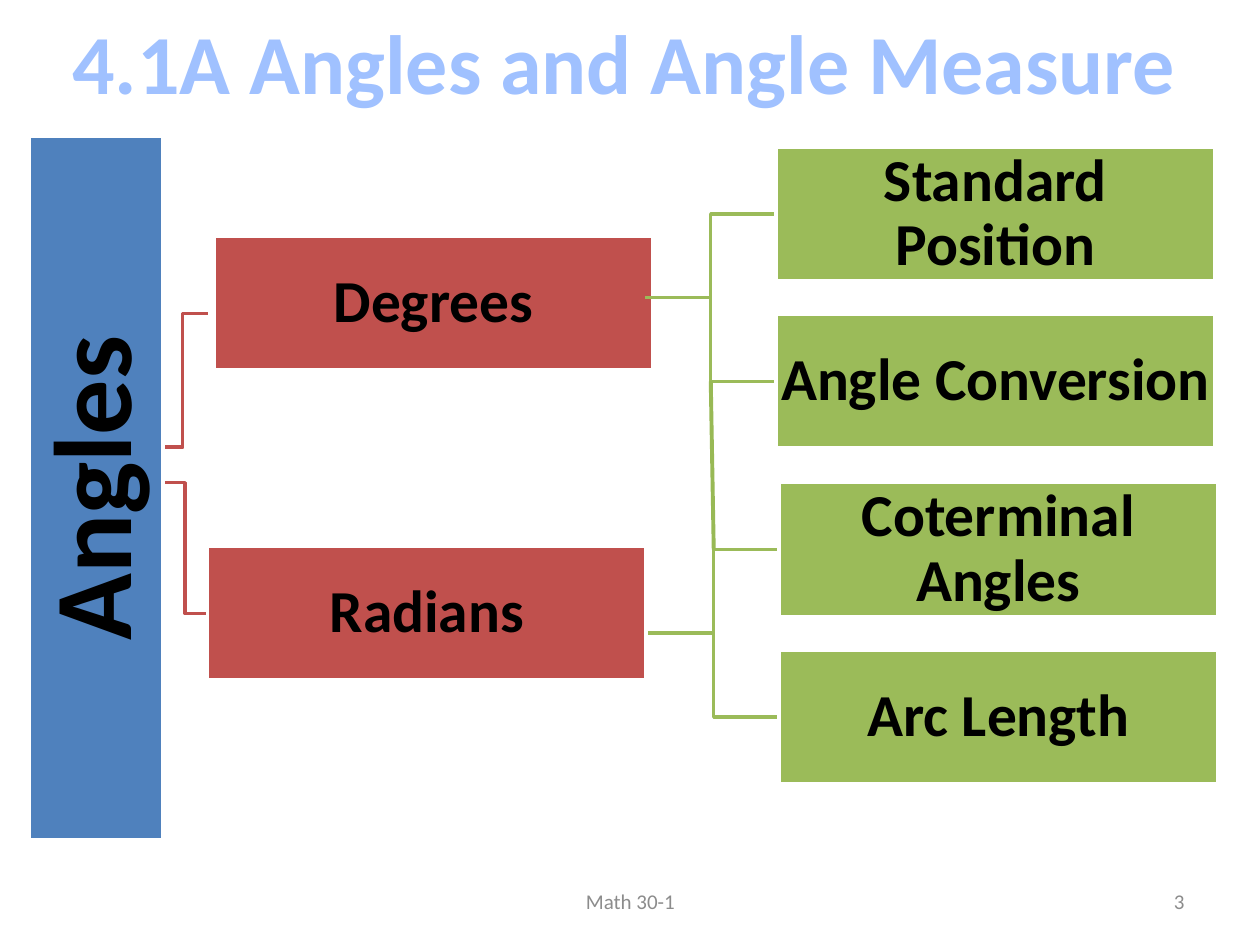
from dataclasses import dataclass

from lxml import etree
from pptx import Presentation
from pptx.dml.color import RGBColor
from pptx.enum import shapes, text
from pptx.oxml import ns
from pptx.util import Pt


@dataclass(frozen=True)
class Theme:
    font: str = "Calibri"
    title: str = "A0C1FF"
    root: str = "4F81BD"
    unit: str = "C0504D"
    topic: str = "9BBB59"
    link: str = "98B955"
    ink: str = "000000"
    paper: str = "FFFFFF"
    footer: str = "8C8C8C"
    title_size: float = 48
    root_size: float = 63
    node_size: float = 34
    footer_size: float = 12
    line: float = 2
    link_line: float = 2.25


THEME = Theme()
NODE_W, NODE_H = 250.5, 76.5
TOPIC_GAP = 19
FORK_W = 74.7


def write(frame, wording, size, color=THEME.ink, bold=False, spacing=1.0,
          align=text.PP_ALIGN.CENTER, anchor=text.MSO_ANCHOR.MIDDLE,
          inset=None, wrap=True):
    frame.word_wrap = wrap
    frame.vertical_anchor = anchor
    if inset is not None:
        frame.margin_left = frame.margin_right = Pt(inset)
        frame.margin_top = frame.margin_bottom = Pt(inset)
    paragraph = frame.paragraphs[0]
    paragraph.alignment = align
    paragraph.line_spacing = spacing
    run = paragraph.add_run()
    run.text = wording
    run.font.name = THEME.font
    run.font.size = Pt(size)
    run.font.bold = bold
    run.font.color.rgb = RGBColor.from_string(color)


def stroke(line, color, width=THEME.line):
    line.color.rgb = RGBColor.from_string(color)
    line.width = Pt(width)


def add_label(slide, box, wording, size, **style):
    label = slide.shapes.add_textbox(*map(Pt, box))
    write(label.text_frame, wording, size, **style)
    return label


def add_node(slide, box, wording, fill, size=THEME.node_size, inset=1.5, rotation=0):
    node = slide.shapes.add_shape(shapes.MSO_SHAPE.RECTANGLE, *map(Pt, box))
    node.rotation = rotation
    node.shadow.inherit = False
    node.fill.solid()
    node.fill.fore_color.rgb = RGBColor.from_string(fill)
    stroke(node.line, THEME.paper)
    write(node.text_frame, wording, size, bold=True, spacing=0.9, inset=inset)


def add_elbow(slide, start, end, color):
    middle = (start[0] + end[0]) / 2
    points = [start, (middle, start[1]), (middle, end[1]), end]
    corners = [(Pt(x), Pt(y)) for x, y in points]
    builder = slide.shapes.build_freeform(*corners[0])
    builder.add_line_segments(corners[1:], close=False)
    elbow = builder.convert_to_shape()
    elbow.fill.background()
    elbow.shadow.inherit = False
    stroke(elbow.line, color)


def add_title(slide, box):
    title = add_label(slide, box, "4.1A Angles and Angle Measure", THEME.title_size,
                      color=THEME.title, bold=True, wrap=False,
                      anchor=text.MSO_ANCHOR.TOP)
    title.text_frame.auto_size = text.MSO_AUTO_SIZE.SHAPE_TO_FIT_TEXT


def add_root(slide, box):
    """Vertical bar: a wide node turned a quarter to the left about its centre."""
    left, top, width, height = box
    turned = (left + (width - height) / 2, top + (height - width) / 2, height, width)
    add_node(slide, turned, "Angles", THEME.root, THEME.root_size, 2.9, rotation=270)


def add_topics(slide, box, topics):
    """Stack of topics with a fork to their left; returns the fork's trunk x and ends."""
    left, top, width, height = box
    pitch = height + TOPIC_GAP
    centers = [top + height / 2 + row * pitch for row in range(len(topics))]
    fork = (left - FORK_W, sum(centers) / len(centers))
    for center in centers:
        add_elbow(slide, fork, (left, center), THEME.topic)
    for topic, center in zip(topics, centers):
        add_node(slide, (left, center - height / 2, width, height), topic, THEME.topic)
    return left - FORK_W / 2, centers[0], centers[-1]


def add_link(slide, start, end):
    link = slide.shapes.add_connector(shapes.MSO_CONNECTOR.STRAIGHT,
                                      *map(Pt, start + end))
    stroke(link.line, THEME.link, THEME.link_line)
    etree.SubElement(link._element.spPr, ns.qn("a:effectLst"))


def add_footer(slide, top, height):
    style = dict(size=THEME.footer_size, color=THEME.footer)
    add_label(slide, (246.2, top, 228.2, height), "Math 30-1", **style)
    add_label(slide, (516.2, top, 167.8, height), "3",
              align=text.PP_ALIGN.RIGHT, **style)


def main():
    deck = Presentation()
    deck.slide_width, deck.slide_height = Pt(720), Pt(540)
    slide = deck.slides.add_slide(deck.slide_layouts[6])

    # Root bar and its links to the two units
    add_elbow(slide, (92.9, 275.8), (118.8, 350.6), THEME.unit)
    add_elbow(slide, (90, 255.6), (118.8, 179.3), THEME.unit)
    add_root(slide, (16.7, 78, 76.5, 402))

    # Units
    add_node(slide, (122.4, 135, NODE_W, NODE_H), "Degrees", THEME.unit)
    add_node(slide, (118.6, 312.2, NODE_W, NODE_H), "Radians", THEME.unit)

    # Topics, with a link joining the two forks
    upper_x, _, upper_end = add_topics(slide, (443.5, 84.1, NODE_W, NODE_H),
                                       ["Standard Position", "Angle Conversion"])
    lower_x, lower_start, _ = add_topics(slide, (445.2, 275.8, NODE_W, NODE_H),
                                         ["Coterminal Angles", "Arc Length"])
    add_link(slide, (upper_x, upper_end), (lower_x, lower_start))

    # Title and footer
    add_title(slide, (31, 2.2, 651.6, 65.5))
    add_footer(slide, 500.4, 28.8)

    deck.save("out.pptx")


if __name__ == "__main__":
    main()
